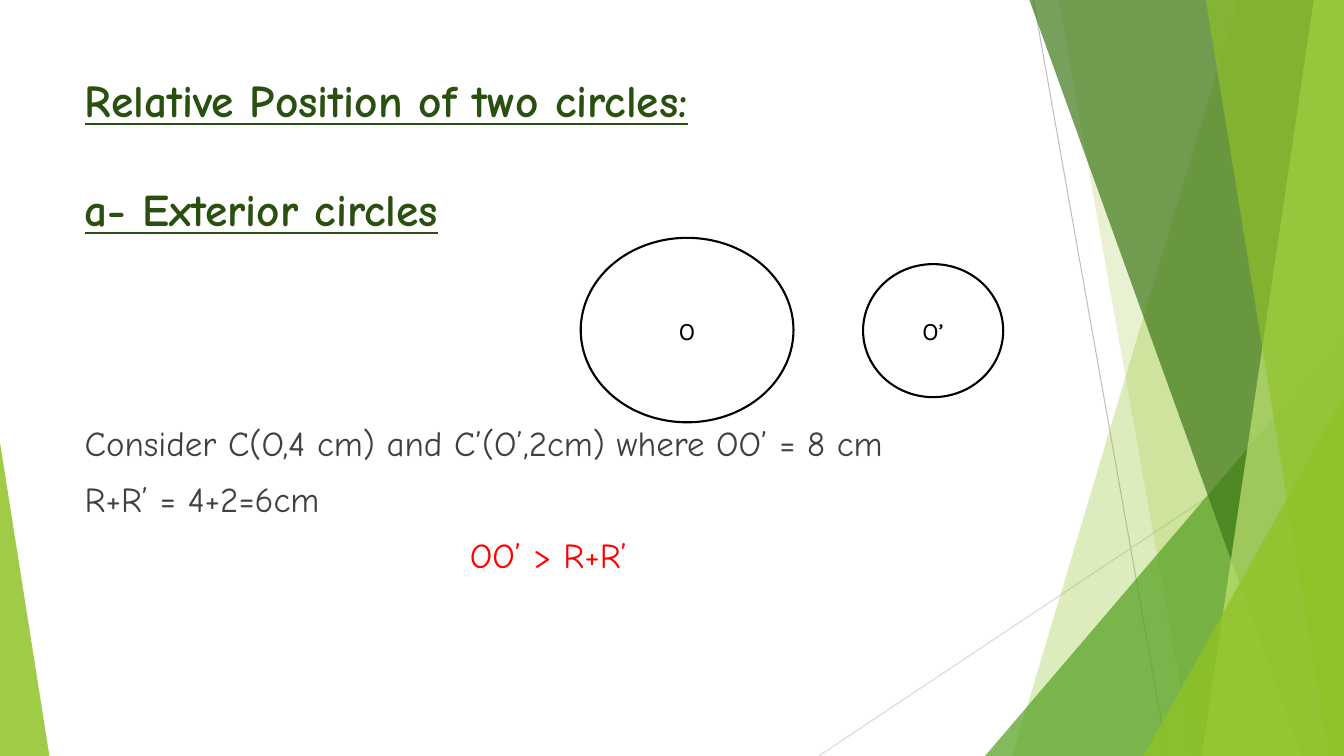
import pptx
import pptx.util
import pptx.dml.color
import pptx.enum.shapes
import pptx.enum.text
import pptx.oxml
import pptx.oxml.ns
import lxml.etree

Inches = pptx.util.Inches
Pt = pptx.util.Pt
RGBColor = pptx.dml.color.RGBColor
Kind = pptx.enum.shapes.MSO_SHAPE
Anchor = pptx.enum.text.MSO_ANCHOR
Align = pptx.enum.text.PP_ALIGN
qn = pptx.oxml.ns.qn

LIME = RGBColor(0x90, 0xC2, 0x26)
PALE = RGBColor(0xC0, 0xE4, 0x74)
GREEN = RGBColor(0x54, 0xA0, 0x21)
DARK = RGBColor(0x3F, 0x78, 0x19)
HEAD = RGBColor(0x2A, 0x50, 0x10)
TEXT = RGBColor(0x40, 0x40, 0x40)
RED = RGBColor(0xFF, 0x00, 0x00)
BLACK = RGBColor(0x00, 0x00, 0x00)
WHITE = RGBColor(0xFF, 0xFF, 0xFF)
SILVER = RGBColor(0xBF, 0xBF, 0xBF)
MIST = RGBColor(0xD9, 0xD9, 0xD9)

WIDE, HIGH = 13.33, 7.5
FONT = "Comic Neue"


def add_line(slide, start, end, color):
    line = slide.shapes.add_connector(
        pptx.enum.shapes.MSO_CONNECTOR.STRAIGHT,
        *[Inches(n) for n in start + end])
    line.line.color.rgb = color
    line.line.width = Pt(0.75)
    lxml.etree.SubElement(line._element.spPr, qn("a:effectLst"))


def tint(shape, color, alpha):
    """Fill a shape with a see-through colour, alpha in percent."""
    shape.shadow.inherit = False
    shape.line.fill.background()
    shape.fill.solid()
    shape.fill.fore_color.rgb = color
    tone = shape._element.spPr.find(".//" + qn("a:srgbClr"))
    lxml.etree.SubElement(tone, qn("a:alpha"), val=str(alpha * 1000))


def add_band(slide, top, foot, color, alpha):
    """Band from a slanted left edge to the right edge of the slide."""
    pen = slide.shapes.build_freeform(Inches(top), 0)
    ends = [(WIDE, 0), (WIDE, HIGH), (foot, HIGH)]
    pen.add_line_segments([(Inches(x), Inches(y)) for x, y in ends])
    tint(pen.convert_to_shape(), color, alpha)


def add_wedge(slide, left, top, width, peak, color, alpha):
    """Triangle that stands on the bottom edge of the slide."""
    wedge = slide.shapes.add_shape(
        Kind.ISOSCELES_TRIANGLE, Inches(left), Inches(top),
        Inches(width), Inches(HIGH - top))
    wedge.adjustments[0] = peak
    tint(wedge, color, alpha)


def add_run(para, text, font, size, color):
    run = para.add_run()
    run.text = text
    run.font.name = font
    run.font.size = Pt(size)
    run.font.color.rgb = color
    return run


def add_circle(slide, kind, box, name):
    circle = slide.shapes.add_shape(kind, *[Inches(n) for n in box])
    circle.shadow.inherit = False
    circle.fill.solid()
    circle.fill.fore_color.rgb = WHITE
    circle.line.color.rgb = BLACK
    circle.line.width = Pt(1.5)
    frame = circle.text_frame
    frame.vertical_anchor = Anchor.MIDDLE
    para = frame.paragraphs[0]
    para.alignment = Align.CENTER
    add_run(para, name, "Karla", 18, BLACK)


def set_frame(holder, box):
    """Place a placeholder and give back its text frame."""
    holder.left, holder.top, holder.width, holder.height = [
        Inches(n) for n in box]
    frame = holder.text_frame
    frame.word_wrap = True
    frame.auto_size = pptx.enum.text.MSO_AUTO_SIZE.NONE
    frame.vertical_anchor = Anchor.TOP
    return frame


def add_para(frame, index, align, gap):
    para = frame.paragraphs[0] if index == 0 else frame.add_paragraph()
    para.alignment = align
    para.space_before = Pt(gap if index else 0)
    return para


def fill_title(slide):
    frame = set_frame(slide.shapes.title, (0.74, 0.67, 9.4, 1.44))
    lines = ["Relative Position of two circles:", "a- Exterior circles"]
    for index, text in enumerate(lines):
        para = add_para(frame, index, Align.LEFT, 39)
        run = add_run(para, text, FONT, 32.4, HEAD)
        run.font.bold = True
        run.font.underline = True


def fill_body(slide):
    frame = set_frame(slide.placeholders[1], (0.74, 2.36, 9.4, 4.24))
    frame.margin_top = Inches(1.82)  # room for the circles
    lines = [
        ("Consider C(O,4 cm) and C’(O’,2cm) where OO’ = 8 cm",
         Align.LEFT, TEXT),
        ("R+R’ = 4+2=6cm", Align.LEFT, TEXT),
        ("OO’ > R+R’", Align.CENTER, RED),
    ]
    for index, (text, align, color) in enumerate(lines):
        para = add_para(frame, index, align, 10)
        props = para._p.get_or_add_pPr()
        props.set("marL", "0")
        props.set("indent", "0")
        lxml.etree.SubElement(props, qn("a:buNone"))
        add_run(para, text, FONT, 25, color)


def add_decor(slide):
    add_line(slide, (10.25, 0), (11.58, HIGH), SILVER)
    add_line(slide, (WIDE, 4.03), (8.12, HIGH), MIST)
    add_band(slide, 12.28, 10.04, LIME, 30)
    add_band(slide, 10.5, 11.83, LIME, 20)
    add_wedge(slide, 9.77, 3.33, 3.56, 1, GREEN, 72)
    add_band(slide, 10.21, 12.91, DARK, 70)
    add_band(slide, 13.03, 11.92, PALE, 70)
    add_band(slide, 11.96, 13.18, LIME, 65)
    add_wedge(slide, 11.34, 3.93, 1.99, 1, LIME, 80)
    add_wedge(slide, 0, 4.39, 0.49, 0, LIME, 85)


def main():
    deck = pptx.Presentation()
    deck.slide_width = Inches(WIDE)
    deck.slide_height = Inches(HIGH)
    slide = deck.slides.add_slide(deck.slide_layouts[1])

    # Green backdrop
    add_decor(slide)

    # Heading and statements
    fill_title(slide)
    fill_body(slide)

    # The two circles
    add_circle(slide, Kind.FLOWCHART_CONNECTOR,
               (5.76, 2.36, 2.11, 1.83), "O")
    add_circle(slide, Kind.OVAL, (8.56, 2.62, 1.39, 1.32), "O’")

    deck.save("out.pptx")


if __name__ == "__main__":
    main()
